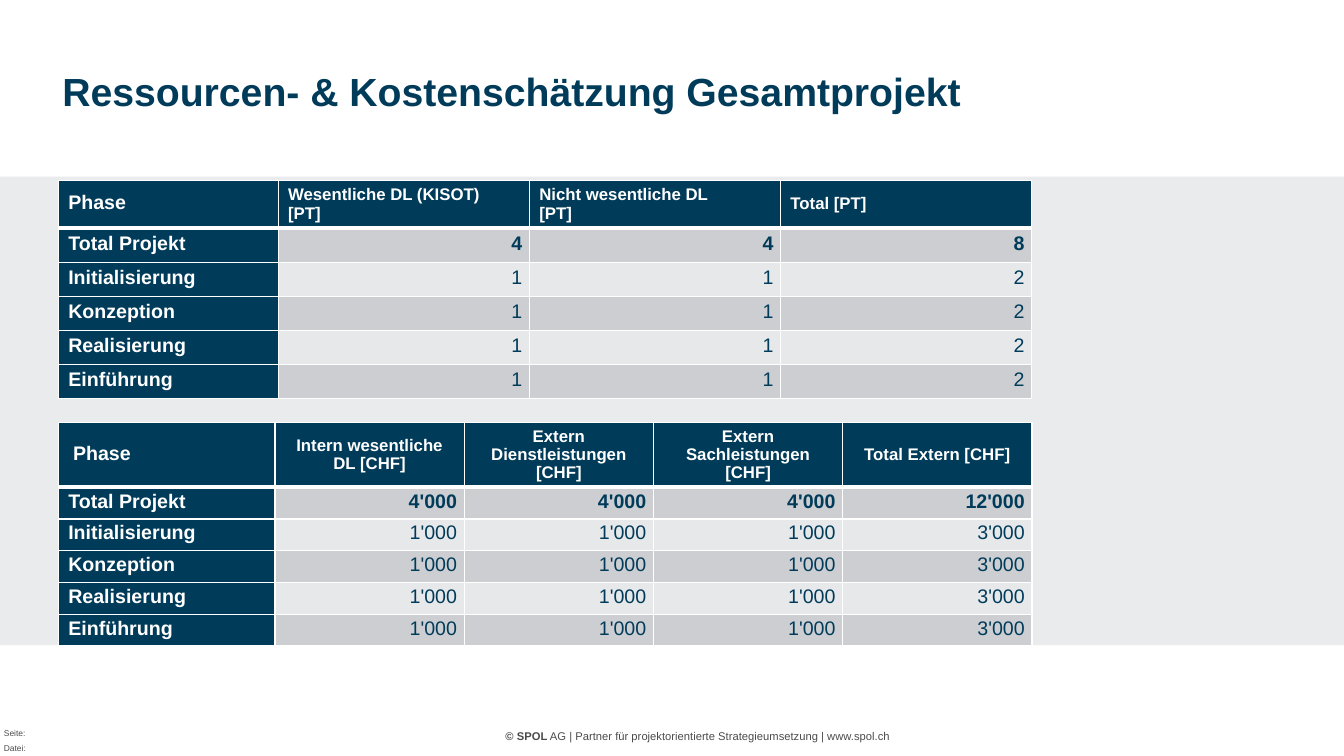
from lxml import etree
from pptx import Presentation
from pptx.dml.color import RGBColor
from pptx.enum import shapes, text
from pptx.oxml import ns
from pptx.util import Cm, Pt

TITLE = "Ressourcen- & Kostenschätzung Gesamtprojekt"
COPYRIGHT = [("© SPOL", True),
             (" AG | Partner für projektorientierte Strategieumsetzung | www.spol.ch", False)]
PAGE_LABELS = [("Seite:", 18.34), ("Datei:", 18.72)]
PHASES = ["Total Projekt", "Initialisierung", "Konzeption", "Realisierung", "Einführung"]

# Lengths in cm; every phase below the total has the same values.
TABLES = [
    {"headers": ["Phase", "Wesentliche DL (KISOT)\v[PT]", "Nicht wesentliche DL\n[PT]",
                 "Total [PT]"],
     "total": ["4", "4", "8"], "phase": ["1", "1", "2"],
     "top": 4.55, "widths": [5.54] + [6.33] * 3, "header_height": 1.2, "row_height": 0.86,
     "header_align": "LEFT", "phase_indent": 0.25},
    {"headers": ["Phase", "Intern wesentliche DL [CHF]", "Extern\nDienstleistungen [CHF]",
                 "Extern\nSachleistungen [CHF]", "Total Extern [CHF]"],
     "total": ["4'000", "4'000", "4'000", "12'000"],
     "phase": ["1'000", "1'000", "1'000", "3'000"],
     "top": 10.64, "widths": [5.46] + [4.77] * 4, "header_height": 1.64, "row_height": 0.8,
     "header_align": "CENTER", "phase_indent": 0.37},
]
COLORS = {"navy": "003B5A", "white": "FFFFFF", "band": "EAEBEC",
          "dark_row": "CCCED2", "light_row": "E7E8EA", "footer": "4B4B4D"}
TABLE_LEFT = 1.47


def color(name):
    return RGBColor.from_string(COLORS[name])


def write(frame, content, size=14, ink="navy", bold=False, align="LEFT", line=None,
          anchor="MIDDLE", margins=(0, 0, 0, 0)):
    """Fill a text frame or cell; content is a string or a list of (text, bold) spans."""
    frame.margin_left, frame.margin_top, frame.margin_right, frame.margin_bottom = map(Cm, margins)
    frame.vertical_anchor = text.MSO_ANCHOR[anchor]
    box = getattr(frame, "text_frame", frame)
    box.word_wrap = True
    if isinstance(content, str):
        box.text = content
        for span in (span for para in box.paragraphs for span in para.runs):
            span.font.bold = bold
    else:
        for words, heavy in content:
            span = box.paragraphs[0].add_run()
            span.text, span.font.bold = words, heavy
    for para in box.paragraphs:
        para.alignment = text.PP_ALIGN[align]
        para.space_before = para.space_after = Pt(0)
        if line:
            para.line_spacing = Pt(line)
        for span in para.runs:
            span.font.name, span.font.size = "Arial", Pt(size)
            span.font.color.rgb = color(ink)


def add_label(page, content, left, top, width, height, **style):
    box = page.shapes.add_textbox(Cm(left), Cm(top), Cm(width), Cm(height))
    write(box.text_frame, content, **style)


def border_cell(cell, top, bottom):
    """Draw white cell borders; top and bottom are widths in points."""
    properties = cell._tc.get_or_add_tcPr()
    for place, (side, width) in enumerate([("L", 1), ("R", 1), ("T", top), ("B", bottom)]):
        edge = etree.Element(ns.qn(f"a:ln{side}"), w=str(Pt(width)))
        fill = etree.SubElement(edge, ns.qn("a:solidFill"))
        etree.SubElement(fill, ns.qn("a:srgbClr"), val=COLORS["white"])
        properties.insert(place, edge)


def cell_style(row, column, data):
    """Return the fill name and text format of one table cell."""
    if row == 0:
        first = column == 0
        indent = data["phase_indent"] if first else 0.25
        return "navy", dict(size=14 if first else 12, ink="white", bold=True,
                            align="LEFT" if first else data["header_align"],
                            line=14 if first else 13, margins=(indent, 0.12, 0.25, 0.12))
    if column == 0:
        return "navy", dict(ink="white", bold=True, line=13, margins=(0.25, 0, 0.25, 0))
    return ("dark_row" if row % 2 else "light_row",
            dict(bold=row == 1, align="RIGHT", line=13, margins=(0.18, 0, 0.18, 0)))


def add_estimate(page, data):
    values = [data["total"]] + [data["phase"]] * (len(PHASES) - 1)
    rows = [data["headers"]] + [[name] + numbers for name, numbers in zip(PHASES, values)]
    heights = [data["header_height"]] + [data["row_height"]] * len(PHASES)
    table = page.shapes.add_table(
        len(rows), len(data["headers"]), Cm(TABLE_LEFT), Cm(data["top"]),
        Cm(sum(data["widths"])), Cm(sum(heights))).table
    for column, width in zip(table.columns, data["widths"]):
        column.width = Cm(width)
    for r, (contents, height) in enumerate(zip(rows, heights)):
        table.rows[r].height = Cm(height)
        for c, content in enumerate(contents):
            cell = table.cell(r, c)
            fill, style = cell_style(r, c, data)
            cell.fill.solid()
            cell.fill.fore_color.rgb = color(fill)
            border_cell(cell, top=3 if r == 1 else 1, bottom=3 if r == 0 else 1)
            write(cell, content, **style)


def main():
    deck = Presentation()
    deck.slide_width, deck.slide_height = Cm(33.87), Cm(19.05)
    page = deck.slides.add_slide(deck.slide_layouts.get_by_name("Title Only"))

    title = page.shapes.title
    title.left, title.top, title.width, title.height = Cm(1.32), Cm(0.71), Cm(25.02), Cm(3.18)
    write(title.text_frame, TITLE, size=28, bold=True, margins=(0.25, 0, 0.25, 0))
    title.text_frame.auto_size = text.MSO_AUTO_SIZE.NONE

    band = page.shapes.add_shape(shapes.MSO_SHAPE.RECTANGLE, 0, Cm(4.45),
                                 deck.slide_width, Cm(11.81))
    band.shadow.inherit = False
    band.fill.solid()
    band.fill.fore_color.rgb = color("band")
    band.line.fill.background()

    add_label(page, COPYRIGHT, 8.66, 18.11, 17.86, 0.61, size=8, ink="footer",
              align="CENTER", anchor="BOTTOM")
    for label, top in PAGE_LABELS:
        add_label(page, label, 0.1, top, 0.74, 0.25, size=6, ink="footer", anchor="TOP")
    for data in TABLES:
        add_estimate(page, data)
    deck.save("out.pptx")


if __name__ == "__main__":
    main()
